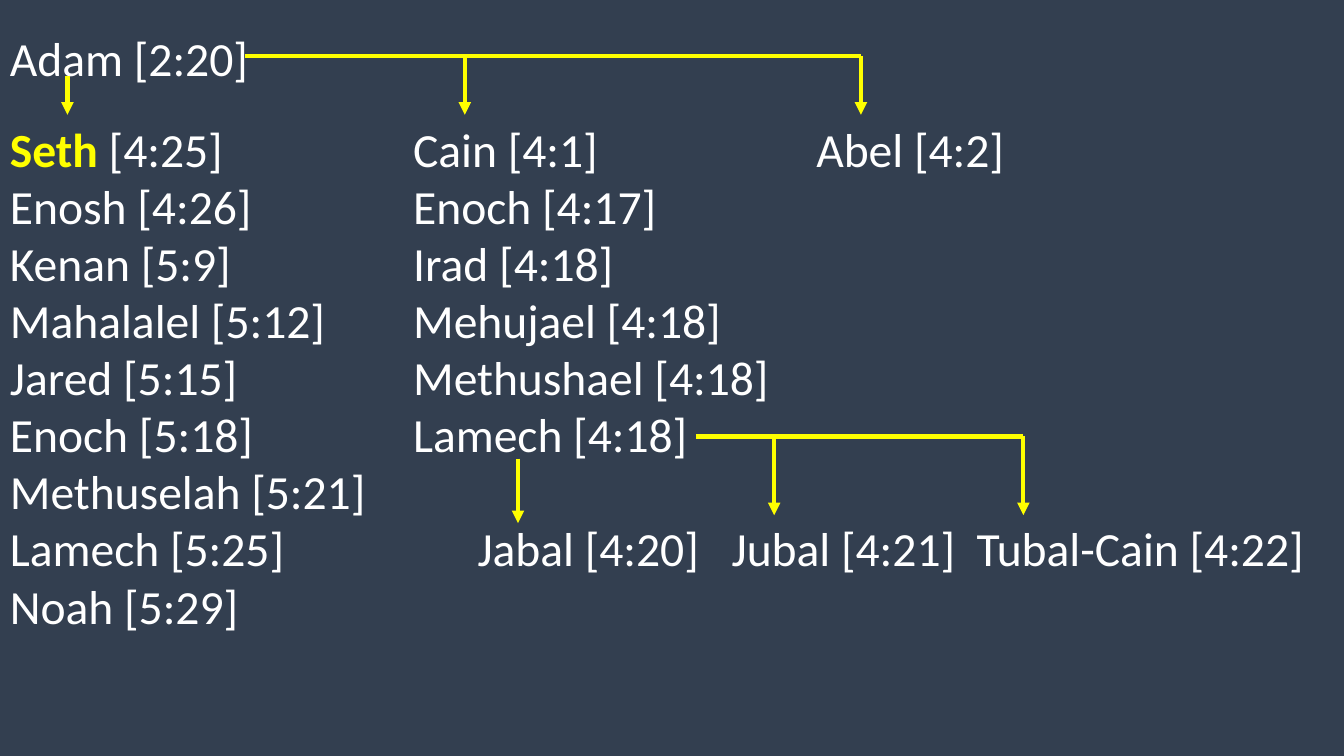
from dataclasses import dataclass

from pptx import Presentation
from pptx.dml.color import RGBColor
from pptx.enum.shapes import MSO_CONNECTOR as CONN
from pptx.enum.text import MSO_AUTO_SIZE as AUTO
from pptx.oxml.xmlchemy import OxmlElement as Elem
from pptx.util import Pt


@dataclass(frozen=True)
class Theme:
    back: RGBColor = RGBColor.from_string("333F50")
    text: RGBColor = RGBColor.from_string("FFFFFF")
    accent: RGBColor = RGBColor.from_string("FFFF00")
    font: str = "Calibri"
    size: int = 34
    line: int = 3


THEME = Theme()
COLUMN_TABS = (288, 576)
SONS_TABS = (334, 515.5, 690.5)

GENERATIONS = [
    ("Enosh [4:26]", "Enoch [4:17]"),
    ("Kenan [5:9]", "Irad [4:18]"),
    ("Mahalalel [5:12]", "Mehujael [4:18]"),
    ("Jared [5:15]", "Methushael [4:18]"),
    ("Enoch [5:18]", "Lamech [4:18]"),
    ("Methuselah [5:21]",),
]
SONS_OF_LAMECH = ("Lamech [5:25]", "Jabal [4:20]", "Jubal [4:21]", "Tubal-Cain [4:22]")

BRANCHES = [
    (175, 40.3, (332, 615), 82),
    (497, 311.8, (553, 731), 368),
]
DESCENTS = [(48.2, 54, 82), (370, 327.6, 373.7)]


def set_attrs(obj, values):
    for name, value in values.items():
        setattr(obj, name, value)


def add_run(p, text, color=THEME.text, bold=False):
    r = p.add_run()
    r.text = text
    set_attrs(r.font, {"name": THEME.font, "size": Pt(THEME.size), "bold": bold})
    r.font.color.rgb = color


def set_tabs(p, stops):
    tabs = Elem("a:tabLst")
    for stop in stops:
        tab = Elem("a:tab")
        tab.set("pos", str(Pt(stop)))
        tab.set("algn", "l")
        tabs.append(tab)
    p._p.get_or_add_pPr().append(tabs)


def add_row(tf, cells, stops=COLUMN_TABS):
    p = tf.add_paragraph()
    set_tabs(p, stops)
    add_run(p, "\t".join(cells))


def add_genealogy(s):
    tf = s.shapes.add_textbox(Pt(0), Pt(0), Pt(960), Pt(460.8)).text_frame
    set_attrs(tf, {"word_wrap": True, "auto_size": AUTO.SHAPE_TO_FIT_TEXT, "margin_top": Pt(20.7)})
    add_run(tf.paragraphs[0], "Adam [2:20]")
    p = tf.add_paragraph()
    p.space_before = Pt(24)
    set_tabs(p, COLUMN_TABS)
    add_run(p, "Seth ", THEME.accent, True)
    add_run(p, "\t".join(("[4:25]", "Cain [4:1]", "Abel [4:2]")))
    for cells in GENERATIONS:
        add_row(tf, cells)
    add_row(tf, SONS_OF_LAMECH, SONS_TABS)
    add_row(tf, ("Noah [5:29]",))


def add_line(s, x1, y1, x2, y2, arrow=False):
    sp = s.shapes.add_connector(CONN.STRAIGHT, Pt(x1), Pt(y1), Pt(x2), Pt(y2))
    set_attrs(sp.line, {"width": Pt(THEME.line)})
    sp.line.color.rgb = THEME.accent
    if arrow:
        tail = Elem("a:tailEnd")
        tail.set("type", "triangle")
        sp.line._get_or_add_ln().append(tail)
    sp._element.spPr.append(Elem("a:effectLst"))


def add_branch(s, left, top, drops, bottom):
    add_line(s, left, top, drops[-1], top)
    for x in drops:
        add_line(s, x, top, x, bottom, True)


def main():
    prs = Presentation()
    set_attrs(prs, {"slide_width": Pt(960), "slide_height": Pt(540)})
    s = prs.slides.add_slide(prs.slide_layouts[6])
    s.background.fill.solid()
    s.background.fill.fore_color.rgb = THEME.back
    add_genealogy(s)
    for branch in BRANCHES:
        add_branch(s, *branch)
    for x, top, bottom in DESCENTS:
        add_line(s, x, top, x, bottom, True)
    prs.save("out.pptx")


if __name__ == "__main__":
    main()
